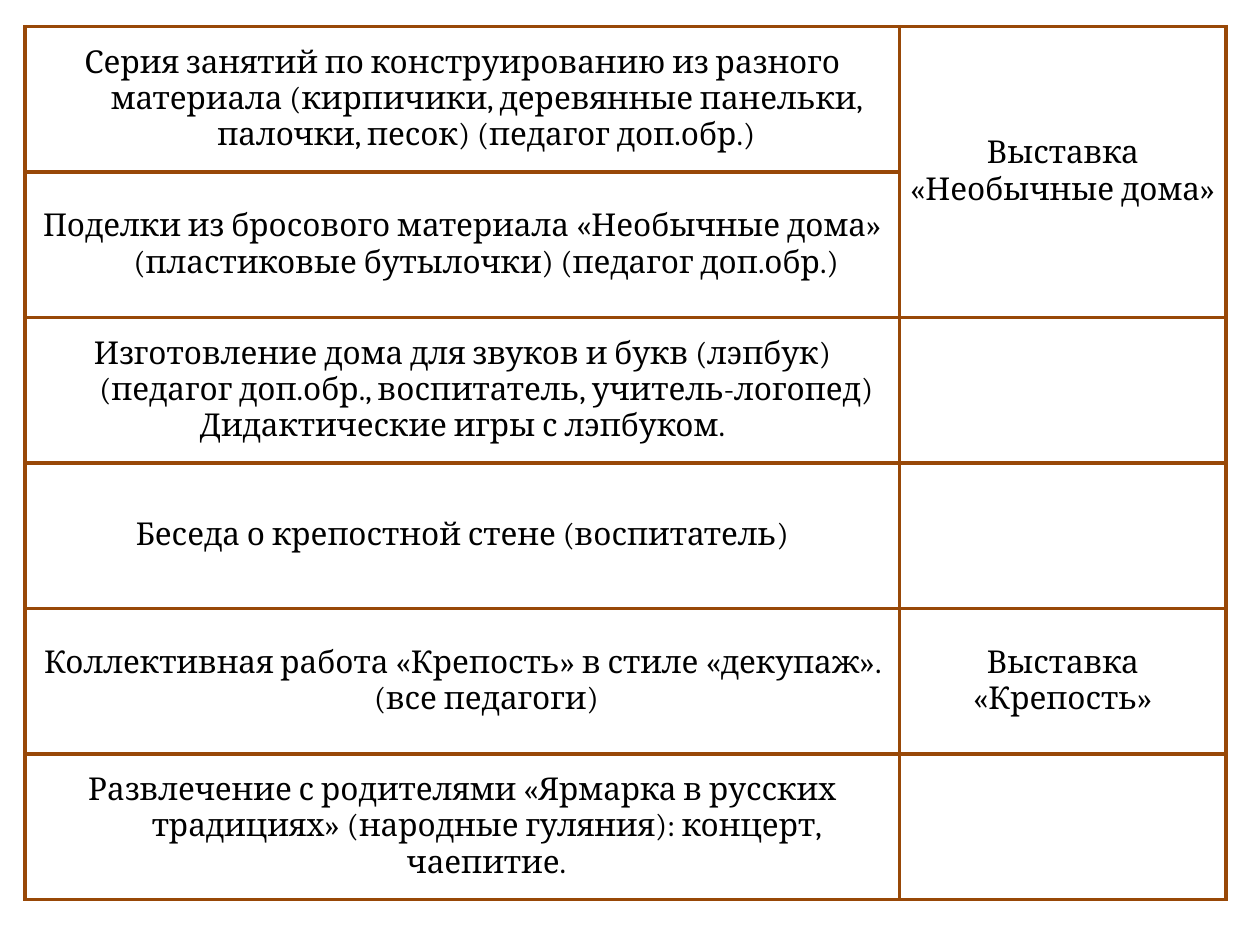
from lxml.etree import SubElement
from pptx import Presentation
from pptx.dml.color import RGBColor
from pptx.enum.text import MSO_ANCHOR, PP_ALIGN
from pptx.oxml.ns import qn
from pptx.util import Inches, Pt

BROWN = RGBColor(0x98, 0x48, 0x07)
BLACK = RGBColor(0, 0, 0)
FONT = "Cambria"
BORDER_WIDTH = Pt(2.25)
HANGING_INDENT = Inches(0.38)
COLUMN_WIDTHS = (Inches(6.94), Inches(2.59))

# Each row: activity, resulting event
ACTIVITIES = [
    ("Серия занятий по конструированию из разного материала "
     "(кирпичики, деревянные панельки, палочки, песок) (педагог доп.обр.)",
     "Выставка «Необычные дома»"),
    ("Поделки из бросового материала «Необычные дома» "
     "(пластиковые бутылочки) (педагог доп.обр.)", ""),
    ("Изготовление дома для звуков и букв (лэпбук) "
     "(педагог доп.обр., воспитатель, учитель-логопед)\n"
     "Дидактические игры с лэпбуком.", ""),
    ("Беседа о крепостной стене (воспитатель)", ""),
    ("Коллективная работа «Крепость» в стиле «декупаж». (все педагоги)",
     "Выставка «Крепость»"),
    ("Развлечение с родителями «Ярмарка в русских традициях» "
     "(народные гуляния): концерт, чаепитие.", ""),
]


def add_borders(cell):
    properties = cell._tc.get_or_add_tcPr()
    for side in ("a:lnL", "a:lnR", "a:lnT", "a:lnB"):
        line = SubElement(properties, qn(side), w=str(BORDER_WIDTH))
        fill = SubElement(line, qn("a:solidFill"))
        SubElement(fill, qn("a:srgbClr"), val=str(BROWN))


def fill_cell(cell, text, hanging):
    add_borders(cell)
    cell.fill.background()
    cell.vertical_anchor = MSO_ANCHOR.MIDDLE
    cell.margin_left = cell.margin_right = Inches(0.03)
    cell.margin_top = cell.margin_bottom = 0
    cell.text = text
    for para in cell.text_frame.paragraphs:
        para.alignment = PP_ALIGN.CENTER
        if hanging:
            indents = para._p.get_or_add_pPr()
            indents.set("marL", str(HANGING_INDENT))
            indents.set("indent", str(-HANGING_INDENT))
        para.font.name = FONT
        para.font.size = Pt(18)
        para.font.color.rgb = BLACK


def add_activity_table(page, left, top, width, height):
    frame = page.shapes.add_table(
        len(ACTIVITIES), len(COLUMN_WIDTHS), left, top, width, height)
    table = frame.table
    table.first_row = table.horz_banding = False
    for column, column_width in zip(table.columns, COLUMN_WIDTHS):
        column.width = column_width
    for row, texts in enumerate(ACTIVITIES):
        for column, text in enumerate(texts):
            fill_cell(table.cell(row, column), text, hanging=column == 0)
    table.cell(0, 1).merge(table.cell(1, 1))


def main():
    deck = Presentation()
    deck.slide_width, deck.slide_height = Inches(10), Inches(7.5)
    page = deck.slides.add_slide(deck.slide_layouts[6])
    add_activity_table(page, Inches(0.2), Inches(0.21),
                       sum(COLUMN_WIDTHS), Inches(6.93))
    deck.save("out.pptx")


if __name__ == "__main__":
    main()
